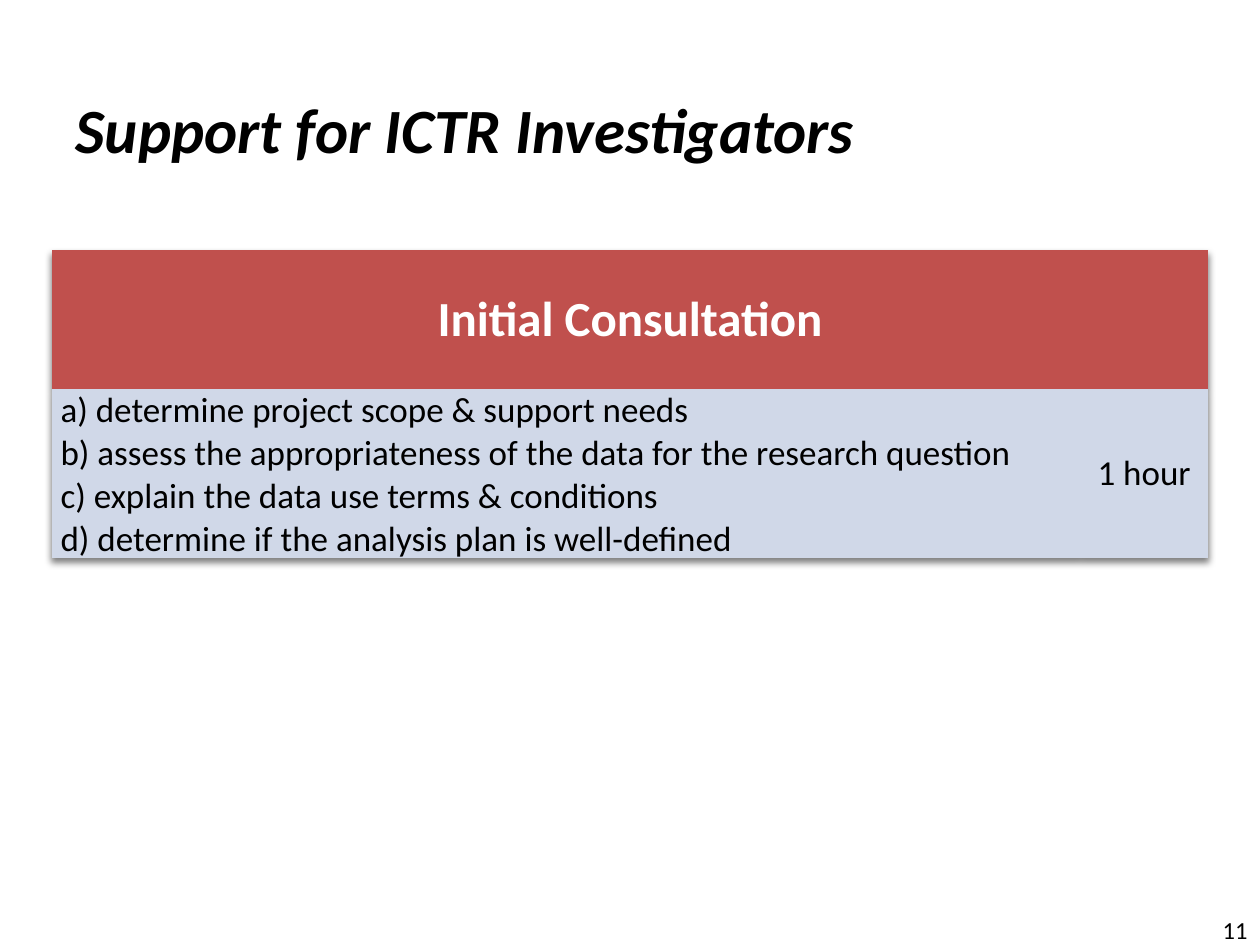
from lxml import etree
from pptx import Presentation
from pptx.dml.color import RGBColor as Rgb
from pptx.enum.text import MSO_ANCHOR as Anchor, PP_ALIGN as Align
from pptx.oxml import parse_xml
from pptx.oxml.ns import qn
from pptx.util import Cm, Pt

TITLE = "Support for ICTR Investigators"
HEAD = "Initial Consultation"
TASKS = [
    "a) determine project scope & support needs",
    "b) assess the appropriateness of the data for the research question",
    "c) explain the data use terms & conditions",
    "d) determine if the analysis plan is well-defined",
]
TIME = "1 hour"
NUMBER = "11"
COLORS = {"ink": "000000", "white": "FFFFFF", "red": "C0504D", "pale": "D0D8E8"}
COLS = [20.73, 2.59]
ROWS = [2.82, 2.82]
PLAIN = "{2D5ABB26-0587-4C30-8999-92F81FD0307C}"
SHADOW = (
    '<a:effectLst xmlns:a="http://schemas.openxmlformats.org/drawingml/2006/main">'
    '<a:outerShdw blurRad="50800" dist="38100" dir="5400000" algn="t" rotWithShape="0">'
    '<a:srgbClr val="000000"><a:alpha val="50000"/></a:srgbClr>'
    "</a:outerShdw></a:effectLst>"
)


def place(shape, left, top, width, height):
    shape.left, shape.top = Cm(left), Cm(top)
    shape.width, shape.height = Cm(width), Cm(height)


def write(frame, lines, size, align=Align.LEFT, color="ink", bold=False, italic=False):
    frame.text = "\n".join(lines)
    for para in frame.paragraphs:
        para.alignment = align
        font = para.font
        font.name, font.size = "Calibri", Pt(size)
        font.bold, font.italic = bold, italic
        font.color.rgb = Rgb.from_string(COLORS[color])


def add_title(slide):
    title = slide.shapes.title
    place(title, 1.27, 1.6, 23.32, 1.96)
    title.text_frame.vertical_anchor = Anchor.MIDDLE
    write(title.text_frame, [TITLE], 36, bold=True, italic=True)


def add_number(slide):
    box = slide.shapes.add_textbox(Cm(19.69), Cm(18.24), Cm(5.71), Cm(1.02))
    box.text_frame.word_wrap = True
    box.text_frame.vertical_anchor = Anchor.MIDDLE
    write(box.text_frame, [NUMBER], 14, Align.RIGHT)


def fill_cell(cell, fill, lines, size, **style):
    cell.fill.solid()
    cell.fill.fore_color.rgb = Rgb.from_string(COLORS[fill])
    cell.vertical_anchor = Anchor.MIDDLE
    cell.margin_left = cell.margin_right = Cm(0.18)
    cell.margin_top = cell.margin_bottom = 0
    write(cell.text_frame, lines, size, **style)


def add_plan(slide):
    frame = slide.shapes.add_table(
        len(ROWS), len(COLS), Cm(1.04), Cm(5.03), Cm(sum(COLS)), Cm(sum(ROWS))
    )
    table = frame.table
    for col, width in zip(table.columns, COLS):
        col.width = Cm(width)
    for row, height in zip(table.rows, ROWS):
        row.height = Cm(height)
    props = table._tbl.tblPr
    props.find(qn("a:tableStyleId")).text = PLAIN
    props.insert(0, parse_xml(SHADOW))
    table.cell(0, 0).merge(table.cell(0, 1))
    fill_cell(table.cell(0, 0), "red", [HEAD], 28,
              align=Align.CENTER, color="white", bold=True)
    fill_cell(table.cell(1, 0), "pale", TASKS, 20)
    fill_cell(table.cell(1, 1), "pale", [TIME], 20, align=Align.CENTER)


def main():
    deck = Presentation()
    deck.slide_width, deck.slide_height = Cm(25.4), Cm(19.05)
    slide = deck.slides.add_slide(deck.slide_layouts[5])
    add_title(slide)
    add_number(slide)
    add_plan(slide)
    deck.save("out.pptx")


if __name__ == "__main__":
    main()
